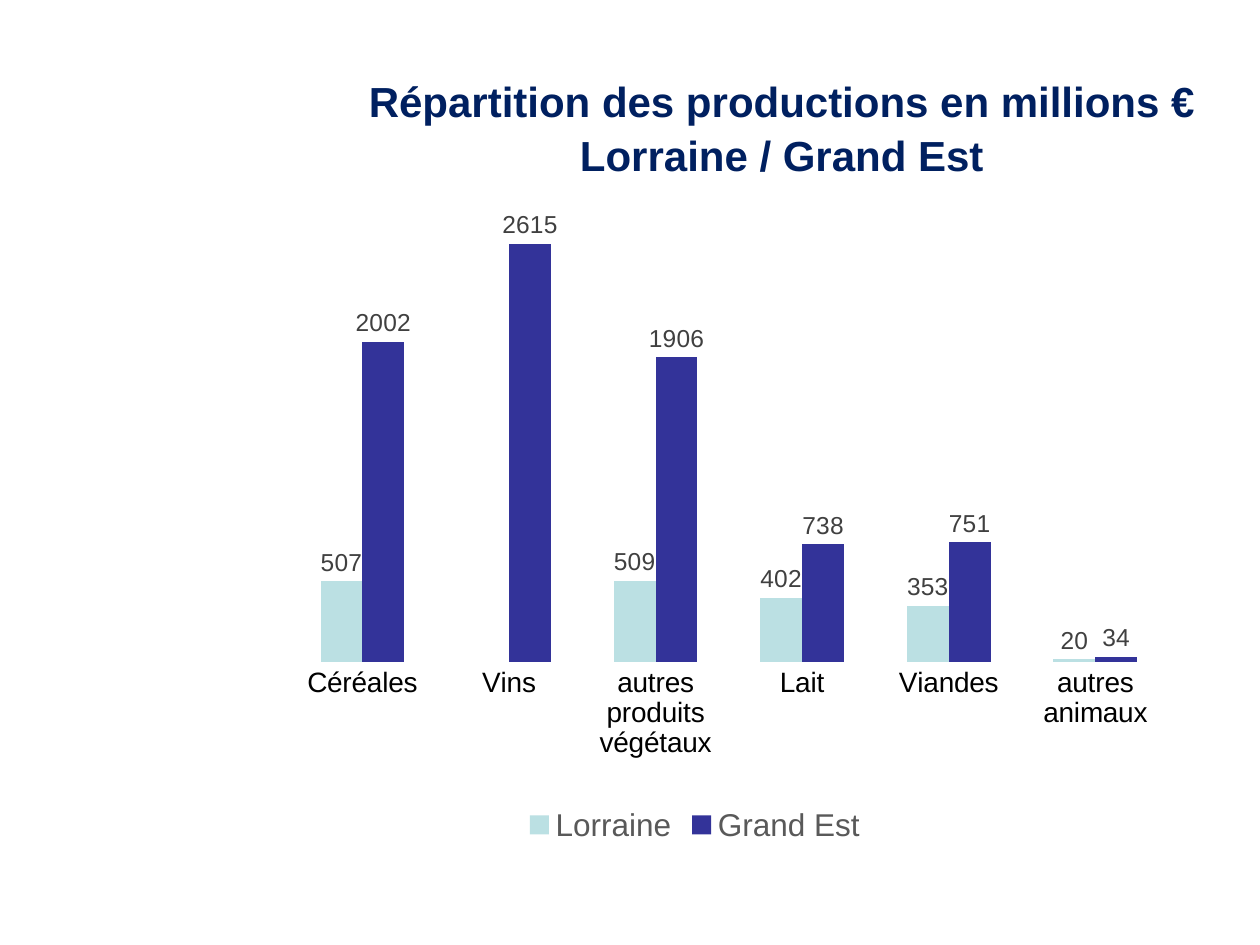
from lxml.etree import SubElement
from pptx import Presentation
from pptx.chart.data import CategoryChartData
from pptx.dml.color import RGBColor
from pptx.enum.chart import XL_CHART_TYPE, XL_LABEL_POSITION, XL_LEGEND_POSITION, XL_TICK_MARK
from pptx.enum.text import MSO_AUTO_SIZE, PP_ALIGN
from pptx.oxml.ns import qn
from pptx.util import Pt

FONT = "Arial"
BLACK = RGBColor(0x00, 0x00, 0x00)
NAVY = RGBColor(0x00, 0x20, 0x60)
LABEL_GREY = RGBColor(0x40, 0x40, 0x40)
LEGEND_GREY = RGBColor(0x59, 0x59, 0x59)
PALE_TEAL = RGBColor(0xBB, 0xE0, 0xE3)
INDIGO = RGBColor(0x33, 0x33, 0x99)

CATEGORIES = ["Céréales", "Vins", "autres produits végétaux", "Lait", "Viandes", "autres animaux"]
SERIES = [
    ("Lorraine", [507, None, 509, 402, 353, 20], PALE_TEAL),
    ("Grand Est", [2002, 2615, 1906, 738, 751, 34], INDIGO),
]


def set_font(font, size, color, bold=False):
    font.name = FONT
    font.size = Pt(size)
    font.color.rgb = color
    font.bold = bold


def place_plot(chart, x, y, w, h):
    """Fix the inner plot area, in fractions of the chart."""
    plot_area = chart.plots[0]._element.getparent()
    layout = plot_area.find(qn("c:layout"))
    if layout is None:
        layout = SubElement(plot_area, qn("c:layout"))
        plot_area.insert(0, layout)
    manual = SubElement(layout, qn("c:manualLayout"))
    settings = [("layoutTarget", "inner"), ("xMode", "edge"), ("yMode", "edge"),
                ("x", x), ("y", y), ("w", w), ("h", h)]
    for name, value in settings:
        SubElement(manual, qn("c:" + name)).set("val", str(value))


def style_axes(chart):
    category_axis = chart.category_axis
    category_axis.major_tick_mark = XL_TICK_MARK.NONE
    category_axis.format.line.fill.background()
    set_font(category_axis.tick_labels.font, 16, BLACK)
    value_axis = chart.value_axis
    value_axis.minimum_scale = 0
    value_axis.maximum_scale = 3000
    value_axis.has_major_gridlines = False
    value_axis.visible = False


def style_series(series, color):
    series.format.fill.solid()
    series.format.fill.fore_color.rgb = color
    labels = series.data_labels
    labels.show_value = True
    labels.position = XL_LABEL_POSITION.OUTSIDE_END
    set_font(labels.font, 14, LABEL_GREY)


def add_production_chart(page):
    data = CategoryChartData()
    data.categories = CATEGORIES
    for name, values, _ in SERIES:
        data.add_series(name, values)
    chart = page.shapes.add_chart(XL_CHART_TYPE.COLUMN_CLUSTERED, Pt(110.9), Pt(37.4),
                                  Pt(572.4), Pt(447.8), data).chart
    set_font(chart.font, 10, BLACK)
    chart.has_title = False
    chart.has_legend = True
    chart.legend.position = XL_LEGEND_POSITION.BOTTOM
    chart.legend.include_in_layout = False
    set_font(chart.legend.font, 18, LEGEND_GREY)
    style_axes(chart)
    plot = chart.plots[0]
    plot.vary_by_categories = False
    plot.gap_width = 150
    plot.overlap = 0
    for series, (_, _, color) in zip(plot.series, SERIES):
        style_series(series, color)
    place_plot(chart, 0.095, 0.149, 0.878, 0.613)


def add_title(page, text):
    box = page.shapes.add_textbox(Pt(201.6), Pt(37.4), Pt(490.3), Pt(87.1))
    frame = box.text_frame
    frame.word_wrap = False
    frame.auto_size = MSO_AUTO_SIZE.SHAPE_TO_FIT_TEXT
    para = frame.paragraphs[0]
    para.text = text
    para.alignment = PP_ALIGN.CENTER
    para.line_spacing = 1.07
    para.space_after = Pt(8)
    set_font(para.font, 24, NAVY, bold=True)


def main():
    deck = Presentation()
    deck.slide_width, deck.slide_height = Pt(720), Pt(540)
    page = deck.slides.add_slide(deck.slide_layouts[6])
    add_production_chart(page)
    add_title(page, "Répartition des productions en millions €\vLorraine / Grand Est")
    deck.save("out.pptx")


if __name__ == "__main__":
    main()
